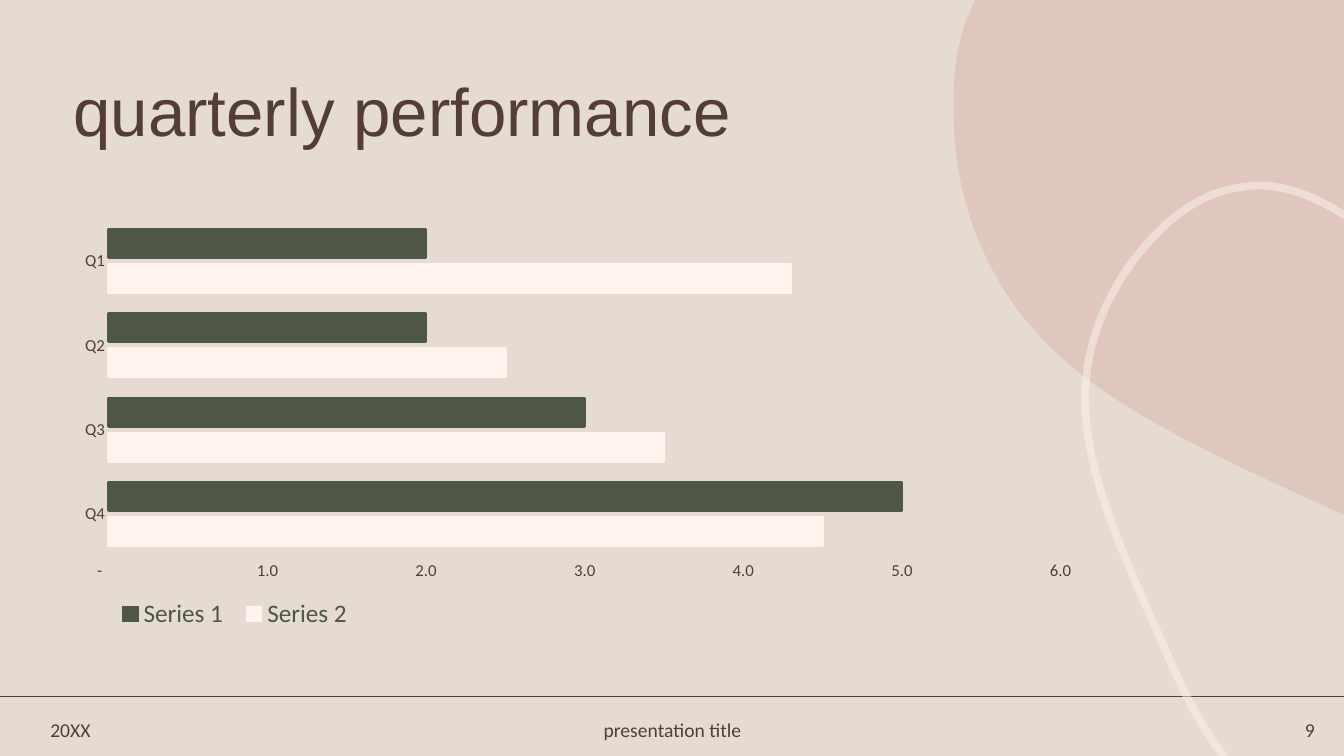
import pptx
import pptx.util
import pptx.dml.color
import pptx.chart.data
import pptx.enum.chart
import pptx.enum.text
import pptx.enum.shapes
import pptx.oxml.ns
import pptx.oxml.xmlchemy

Inches, Pt = pptx.util.Inches, pptx.util.Pt
qn = pptx.oxml.ns.qn
make = pptx.oxml.xmlchemy.OxmlElement
align = pptx.enum.text.PP_ALIGN

BROWN, CREAM, GREEN, SAND, ROSE = "543E34", "FEF3ED", "4E5745", "E6DBD0", "CF9B92"
TITLE = ("quarterly performance", (0.63, 0.77, 11.5, 0.74), 48, "Arial", align.LEFT)
FOOT = [
    ("20XX", (0.4, 7.07, 1.08, 0.34), 14, "Calibri", align.LEFT),
    ("presentation title", (4.79, 7.07, 3.76, 0.34), 14, "Calibri", align.CENTER),
    ("9", (12.06, 7.07, 1.08, 0.34), 14, "Calibri", align.RIGHT),
]
QUARTERS = ["Q4", "Q3", "Q2", "Q1"]
SERIES = [
    ("Series 2", [4.5, 3.5, 2.5, 4.3], CREAM),
    ("Series 1", [5, 3, 2, 2], GREEN),
]
FORMAT = r'_(* #,##0.0_);_(* \(#,##0.0\);_(* "-"??_);_(@_)'
CHART = (0.63, 2.08, 10.24, 4.24)
PLOT = (1.08, 2.17, 9.44, 3.35)
KEY = (1.07, 5.86, 2.52, 0.46)
BLOB_BOX = (9.46, 0, 3.88, 5.11)
BLOB = [
    [(9.67, 0)], [(13.33, 0)], [(13.33, 5.11)], [(13.07, 4.99)],
    [(11.36, 4.21), (10.32, 3.69), (9.78, 2.55)],
    [(9.48, 1.93), (9.45, 1.35), (9.46, 1.01)],
    [(9.45, 0.79), (9.48, 0.49), (9.59, 0.18)],
]
LOOP_BOX = (10.77, 1.84, 2.58, 5.67)
LOOP = [
    [(12.15, 7.51)],
    [(11.98, 7.31), (11.79, 6.99), (11.56, 6.45)],
    [(10.94, 5.07), (10.58, 4.24), (10.86, 3.32)],
    [(11.01, 2.85), (11.27, 2.53), (11.44, 2.35)],
    [(11.61, 2.17), (11.92, 1.89), (12.36, 1.85)],
    [(12.41, 1.84), (12.47, 1.84), (12.52, 1.84)],
    [(12.79, 1.85), (13.08, 1.97), (13.34, 2.14)],
]


def add(node, tag, **attrs):
    child = make(tag)
    for key, value in attrs.items():
        child.set(key, str(value))
    node.append(child)
    return child


def paint(fill, color):
    fill.solid()
    fill.fore_color.rgb = pptx.dml.color.RGBColor.from_string(color)


def fade(node, alpha):
    add(node.find(qn("a:solidFill"))[0], "a:alpha", val=alpha * 1000)


def style(font, size, color, name="Calibri"):
    font.size, font.name = Pt(size), name
    paint(font.fill, color)


def draw(slide, route, box, close):
    left, top, width, height = box
    pen = slide.shapes.build_freeform(Inches(left), Inches(top))
    pen.add_line_segments([(Inches(left + width), Inches(top + height))], close=close)
    shape = pen.convert_to_shape()
    shape.shadow.inherit = False
    track = shape._element.spPr.find(".//" + qn("a:path"))
    for old in list(track):
        track.remove(old)
    for i, part in enumerate(route):
        tag = "a:cubicBezTo" if len(part) == 3 else "a:lnTo" if i else "a:moveTo"
        step = add(track, tag)
        for x, y in part:
            add(step, "a:pt", x=Inches(x - left), y=Inches(y - top))
    if close:
        add(track, "a:close")
    return shape


def place(node, index, box, inner=False):
    for old in node.findall(qn("c:layout")):
        node.remove(old)
    layout = make("c:layout")
    manual = add(layout, "c:manualLayout")
    if inner:
        add(manual, "c:layoutTarget", val="inner")
    for tag in ("c:xMode", "c:yMode"):
        add(manual, tag, val="edge")
    left, top, width, height = CHART
    x, y, w, h = box
    parts = ((x - left) / width, (y - top) / height, w / width, h / height)
    for tag, part in zip("xywh", parts):
        add(manual, "c:" + tag, val=round(part, 4))
    node.insert(index, layout)


def add_chart(slide):
    data = pptx.chart.data.CategoryChartData(number_format=FORMAT)
    data.categories = QUARTERS
    for name, values, color in SERIES:
        data.add_series(name, values)
    kind = pptx.enum.chart.XL_CHART_TYPE.BAR_CLUSTERED
    chart = slide.shapes.add_chart(kind, *map(Inches, CHART), data).chart
    style(chart.font, 10, BROWN)
    chart.has_title = False
    plot = chart.plots[0]
    plot.gap_width, plot.overlap, plot.vary_by_categories = 75, -25, False
    for bars, (name, values, color) in zip(plot.series, SERIES):
        paint(bars.format.fill, color)
        paint(bars.format.line.fill, color)
        bars.format.line.width = Pt(2)
    none = pptx.enum.chart.XL_TICK_MARK.NONE
    for axis in (chart.category_axis, chart.value_axis):
        axis.major_tick_mark = axis.minor_tick_mark = none
        axis.has_major_gridlines = False
        axis.format.line.fill.background()
        style(axis.tick_labels.font, 12, BROWN)
    labels = chart.value_axis.tick_labels
    labels.number_format, labels.number_format_is_linked = FORMAT, False
    chart.has_legend = True
    legend = chart.legend
    legend.position = pptx.enum.chart.XL_LEGEND_POSITION.BOTTOM
    legend.include_in_layout = False
    style(legend.font, 18, GREEN)
    place(chart._chartSpace.chart.plotArea, 0, PLOT, True)
    place(legend._element, 1, KEY)


def add_text(slide, text, box, size, name, side):
    frame = slide.shapes.add_textbox(*map(Inches, box)).text_frame
    frame.word_wrap = True
    frame.vertical_anchor = pptx.enum.text.MSO_ANCHOR.MIDDLE
    para = frame.paragraphs[0]
    para.text, para.alignment = text, side
    style(para.font, size, BROWN, name)
    return para


def main():
    deck = pptx.Presentation()
    deck.slide_width, deck.slide_height = Inches(13.33), Inches(7.5)
    slide = deck.slides.add_slide(deck.slide_layouts[6])
    paint(slide.background.fill, SAND)
    straight = pptx.enum.shapes.MSO_CONNECTOR.STRAIGHT
    level = Inches(6.91)
    rule = slide.shapes.add_connector(straight, 0, level, Inches(13.33), level)
    paint(rule.line.fill, BROWN)
    rule.line.width = Pt(1.25)
    add(rule._element.spPr, "a:effectLst")
    blob = draw(slide, BLOB, BLOB_BOX, True)
    paint(blob.fill, ROSE)
    fade(blob._element.spPr, 30)
    blob.line.fill.background()
    loop = draw(slide, LOOP, LOOP_BOX, False)
    loop.fill.background()
    paint(loop.line.fill, CREAM)
    fade(loop.line._ln, 50)
    loop.line.width = Pt(5.5)
    add_text(slide, *TITLE).line_spacing = 0.9
    add_chart(slide)
    for item in FOOT:
        add_text(slide, *item)
    deck.save("out.pptx")


if __name__ == "__main__":
    main()
